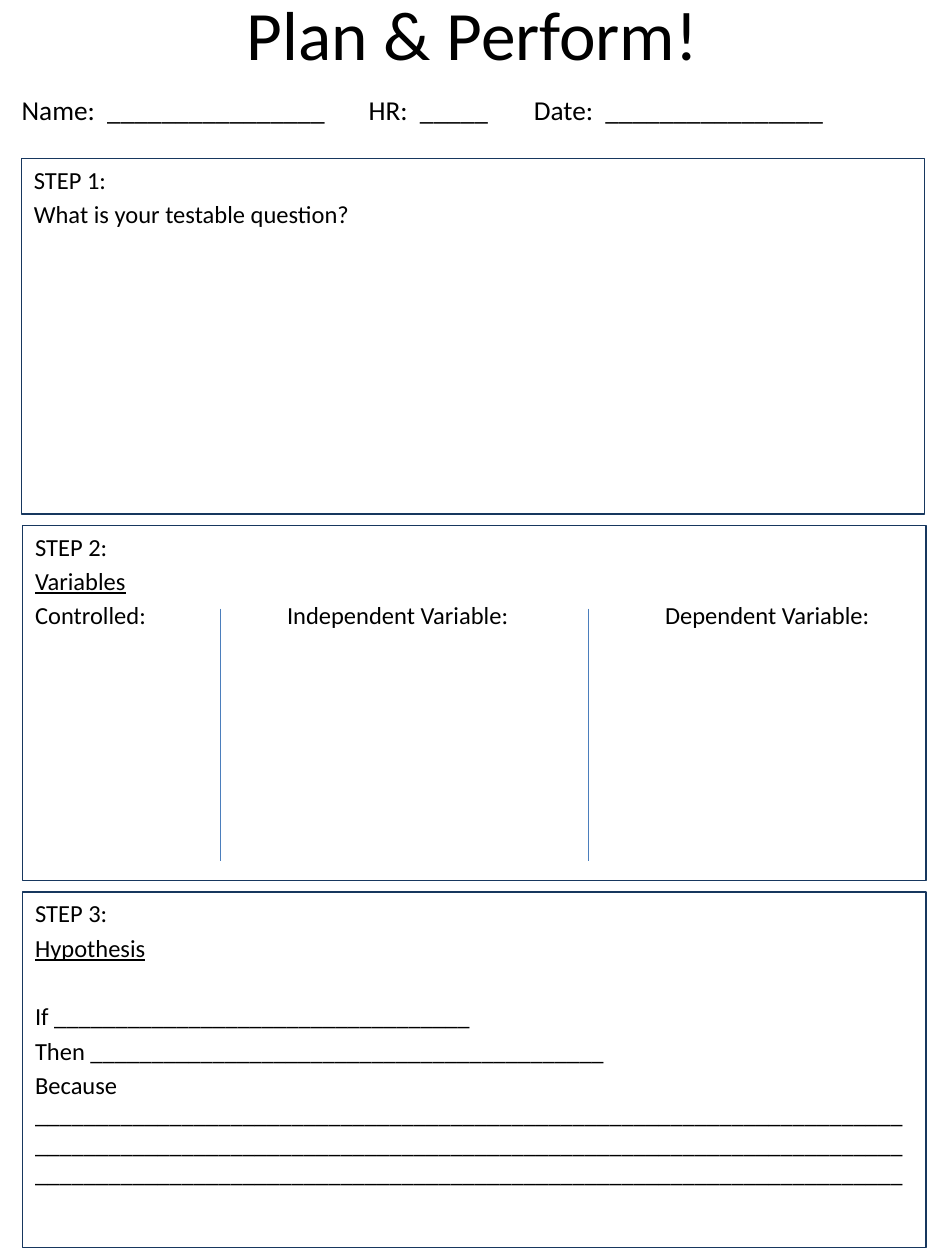
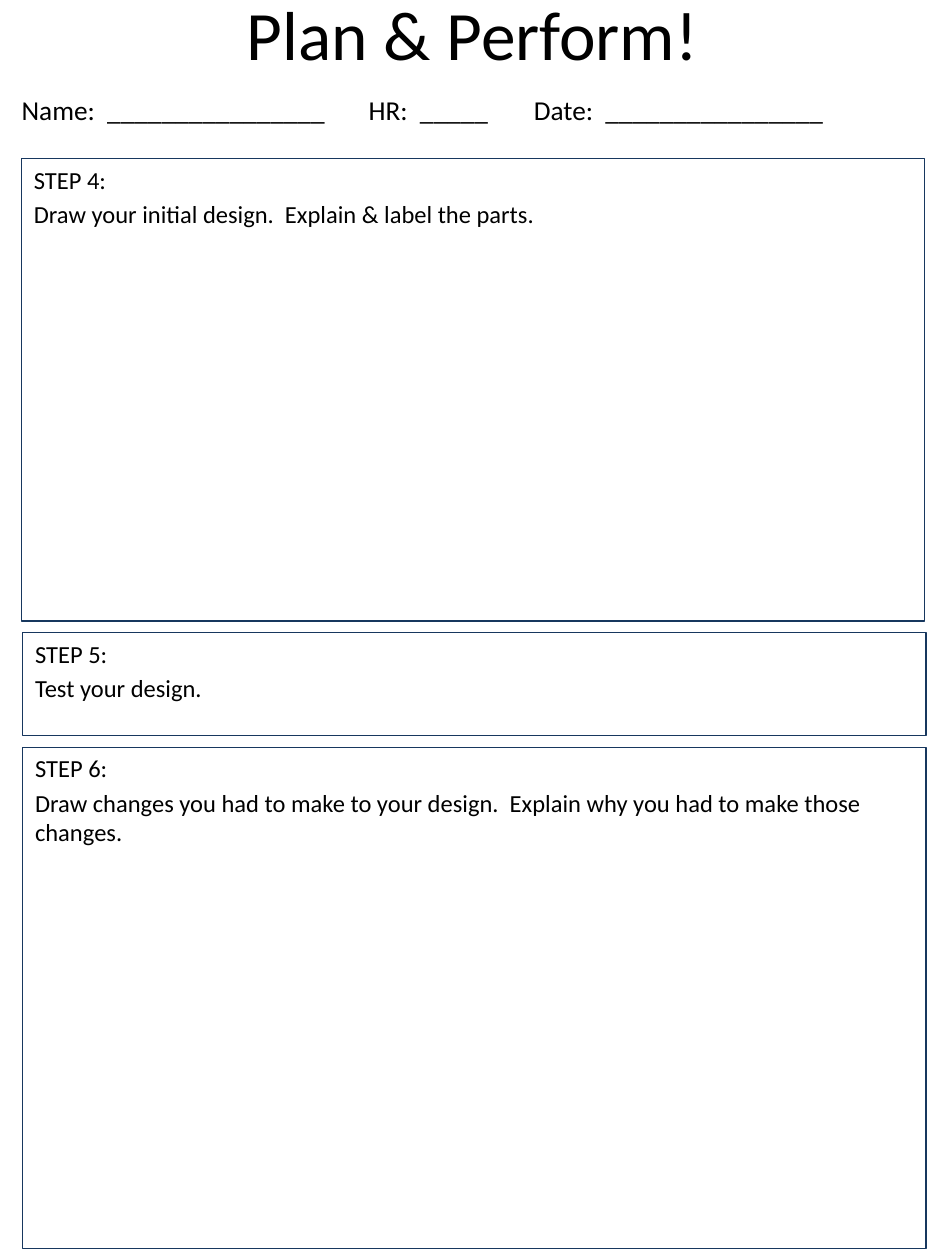
from pptx import Presentation, util as u
from pptx.dml.color import RGBColor
from pptx.enum import shapes, text
from pptx.oxml.ns import qn
from lxml import etree

WIDE, HIGH = 7.5, 10
FONT, INK, EDGE, RULE = "Calibri", "000000", "17375E", "4B7EBC"
TOP, GAP, BOX = 1.26, 0.09, 7.17
TABS = (1, 2, 4, 5)
TITLE = "Plan & Perform!"
FIELDS = [
    ("Name:  " + "_" * 16, 0, 2.75),
    ("Date:  " + "_" * 16, 4.01, 2.75),
    ("HR:  " + "_" * 5, 2.58, 1.64),
]
UNDER = ("Variables", "Hypothesis")
PAGES = [
    [
        (2.82, ["STEP 1:", "What is your testable question?"], []),
        (2.82, ["STEP 2:", "Variables",
                "Controlled:\t\tIndependent Variable:\t\tDependent Variable:"],
         [1.75, 4.67]),
        (2.82, ["STEP 3:", "Hypothesis", "If " + "_" * 34,
                "Then " + "_" * 42, "Because " + "_" * 71 * 3], []),
    ],
    [
        (3.67, ["STEP 4:", "Draw your initial design.  Explain & label the parts."], []),
        (0.82, ["STEP 5:", "Test your design."], []),
        (3.98, ["STEP 6:", "Draw changes you had to make to your design.  "
                "Explain why you had to make those changes."], []),
    ],
]


def paint(hue):
    return RGBColor.from_string(hue)


def inches(*sizes):
    return [u.Inches(size) for size in sizes]


def write(frame, lines, size, align, anchor):
    frame.word_wrap = True
    frame.vertical_anchor = anchor
    for i, line in enumerate(lines):
        para = frame.paragraphs[0] if i == 0 else frame.add_paragraph()
        para.text = line
        para.alignment = align
        para.font.name = FONT
        para.font.size = u.Pt(size)
        para.font.color.rgb = paint(INK)
        yield line, para


def label(slide, line, place, size):
    frame = slide.shapes.add_textbox(*inches(*place)).text_frame
    list(write(frame, [line], size, text.PP_ALIGN.CENTER, text.MSO_ANCHOR.MIDDLE))


def stroke(shape, hue):
    shape.line.color.rgb = paint(hue)
    shape.line.width = u.Pt(0.75)


def stops(para):
    props = para._p.get_or_add_pPr()
    tabs = etree.Element(qn("a:tabLst"))
    for stop in inches(*TABS):
        etree.SubElement(tabs, qn("a:tab"), pos=str(int(stop)), algn="l")
    props.find(qn("a:defRPr")).addprevious(tabs)


def panel(slide, left, top, high, lines):
    box = slide.shapes.add_shape(shapes.MSO_SHAPE.RECTANGLE,
                                 *inches(left, top, BOX, high))
    box.shadow.inherit = False
    box.fill.background()
    stroke(box, EDGE)
    for line, para in write(box.text_frame, lines, 14,
                            text.PP_ALIGN.LEFT, text.MSO_ANCHOR.TOP):
        para.space_before = u.Pt(22.4 if line.startswith("If ") else 2.8)
        if line in UNDER:
            para.font.underline = True
        if "\t" in line:
            stops(para)


def divide(slide, x, top):
    line = slide.shapes.add_connector(shapes.MSO_CONNECTOR.STRAIGHT,
                                      *inches(x, top, x, top + 2))
    stroke(line, RULE)
    etree.SubElement(line._element.spPr, qn("a:effectLst"))


def main():
    deck = Presentation()
    deck.slide_width, deck.slide_height = inches(WIDE, HIGH)
    for steps in PAGES:
        slide = deck.slides.add_slide(deck.slide_layouts[6])
        label(slide, TITLE, (0.56, -0.06, 6.38, 0.64), 39.6)
        for line, left, wide in FIELDS:
            label(slide, line, (left, 0.58, wide, 0.58), 15.6)
        top = TOP
        for i, (high, lines, rules) in enumerate(steps):
            panel(slide, 0.18 if i else 0.17, top, high, lines)
            for x in rules:
                divide(slide, x, top + 0.66)
            top += high + GAP
    deck.save("out.pptx")


if __name__ == "__main__":
    main()
